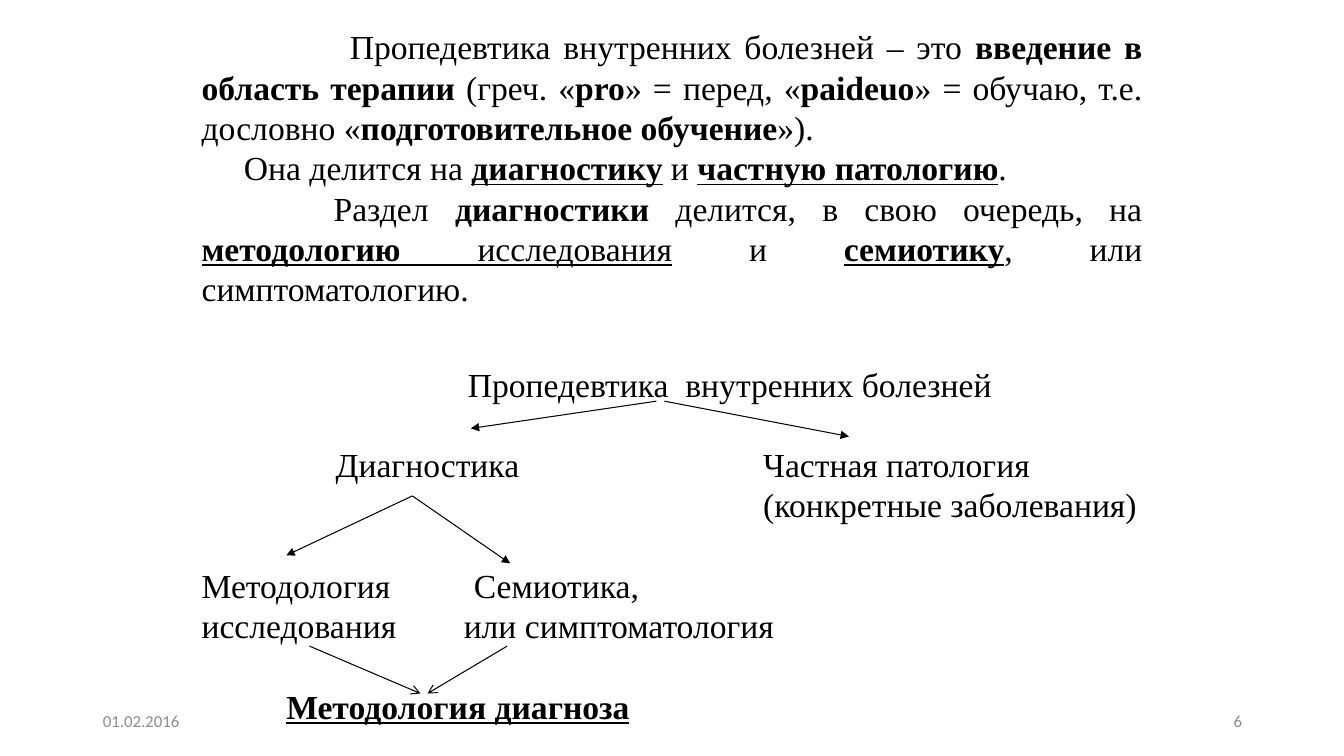
from dataclasses import dataclass

from lxml import etree
from pptx import Presentation
from pptx.dml.color import RGBColor
from pptx.enum.shapes import MSO_CONNECTOR
from pptx.enum.text import MSO_ANCHOR, PP_ALIGN
from pptx.oxml.ns import qn
from pptx.util import Inches, Pt

LEFT, RIGHT, JUSTIFY = PP_ALIGN.LEFT, PP_ALIGN.RIGHT, PP_ALIGN.JUSTIFY
TOP, MIDDLE = MSO_ANCHOR.TOP, MSO_ANCHOR.MIDDLE
STRAIGHT = MSO_CONNECTOR.STRAIGHT
BLANK_LAYOUT = 6


@dataclass(frozen=True)
class Theme:
    body_font: str = "Times New Roman"
    footer_font: str = "Calibri"
    ink: RGBColor = RGBColor(0, 0, 0)
    muted: RGBColor = RGBColor(0x8C, 0x8C, 0x8C)
    body_size: Pt = Pt(24)
    body_spacing: Pt = Pt(28.8)
    footer_size: Pt = Pt(12)
    line_width: Pt = Pt(0.75)


THEME = Theme()

# Each paragraph: first-line indent, then spans (text, style); b = bold, u = underlined
INTRO = [
    (1.47, [("Пропедевтика внутренних болезней – это ", ""),
            ("введение в область терапии ", "b"), ("(греч. «", ""),
            ("pro", "b"), ("» = перед, «", ""), ("paideuo", "b"),
            ("» = обучаю, т.е. дословно «", ""),
            ("подготовительное обучение", "b"), ("»).", "")]),
    (0.42, [("Она делится на ", ""), ("диагностику", "bu"), (" и ", ""),
            ("частную патологию", "bu"), (".", "")]),
    (1.31, [("Раздел ", ""), ("диагностики", "b"),
            (" делится, в свою очередь, на ", ""), ("методологию", "bu"),
            (" исследования", "u"), (" и ", ""), ("семиотику", "bu"),
            (", или симптоматологию.", "")]),
]

# Tree labels: left, top, width, paragraphs
LABELS = [
    (4.64, 3.61, 5.5, [(0, [("Пропедевтика  внутренних болезней", "")])]),
    (3.33, 4.4, 2.2, [(0, [("Диагностика", "")])]),
    (7.57, 4.4, 4, [(0, [("Частная патология", "")]),
                    (0, [("(конкретные заболевания)", "")])]),
    (2, 5.6, 2.2, [(0, [("Методология", "")]), (0, [("исследования", "")])]),
    (4.6, 5.6, 3.4, [(0.1, [("Семиотика,", "")]),
                     (0, [("или симптоматология", "")])]),
    (2.84, 6.8, 3.8, [(0, [("Методология диагноза", "bu")])]),
]

# Arrows: start x, start y, end x, end y, head
ARROWS = [
    (6.51, 3.98, 4.67, 4.25, "triangle"),
    (6.59, 3.98, 8.42, 4.33, "triangle"),
    (4.09, 4.92, 2.84, 5.51, "triangle"),
    (4.09, 4.92, 5.06, 5.59, "triangle"),
    (3.07, 6.41, 4.17, 6.88, "arrow"),
    (5.03, 6.41, 4.24, 6.88, "arrow"),
]


def add_box(page, left, top, width, height, anchor):
    """Add an empty wrapping text frame without margins."""
    box = page.shapes.add_textbox(Inches(left), Inches(top), Inches(width), Inches(height))
    frame = box.text_frame
    frame.word_wrap = True
    frame.vertical_anchor = anchor
    frame.margin_left = frame.margin_right = frame.margin_top = frame.margin_bottom = 0
    return frame


def set_font(font, name, size, color):
    font.name, font.size = name, size
    font.color.rgb = color


def add_body(page, left, top, width, paragraphs, align=LEFT):
    """Add body text with styled spans and first-line indents."""
    frame = add_box(page, left, top, width, 0.4 * len(paragraphs), TOP)
    for index, (indent, spans) in enumerate(paragraphs):
        para = frame.add_paragraph() if index else frame.paragraphs[0]
        para.alignment = align
        para.line_spacing = THEME.body_spacing
        set_font(para.font, THEME.body_font, THEME.body_size, THEME.ink)
        para._p.get_or_add_pPr().set("indent", str(Inches(indent)))
        for text, style in spans:
            span = para.add_run()
            span.text = text
            if "b" in style:
                span.font.bold = True
            if "u" in style:
                span.font.underline = True


def add_footer(page, left, text, align):
    para = add_box(page, left, 6.95, 2.8, 0.4, MIDDLE).paragraphs[0]
    para.text = text
    para.alignment = align
    set_font(para.font, THEME.footer_font, THEME.footer_size, THEME.muted)


def add_arrow(page, x1, y1, x2, y2, head):
    arrow = page.shapes.add_connector(STRAIGHT, Inches(x1), Inches(y1), Inches(x2), Inches(y2))
    arrow.line.color.rgb = THEME.ink
    arrow.line.width = THEME.line_width
    etree.SubElement(arrow.line._get_or_add_ln(), qn("a:tailEnd"), type=head)
    etree.SubElement(arrow._element.spPr, qn("a:effectLst"))


def main():
    deck = Presentation()
    deck.slide_width, deck.slide_height = Inches(13.33), Inches(7.5)
    page = deck.slides.add_slide(deck.slide_layouts[BLANK_LAYOUT])

    # Definition text
    add_body(page, 2, 0.26, 9.33, INTRO, JUSTIFY)

    # Tree of terms
    for left, top, width, paragraphs in LABELS:
        add_body(page, left, top, width, paragraphs)
    for arrow in ARROWS:
        add_arrow(page, *arrow)

    # Date and page number
    add_footer(page, 1.02, "01.02.2016", LEFT)
    add_footer(page, 9.52, "6", RIGHT)

    deck.save("out.pptx")


if __name__ == "__main__":
    main()
